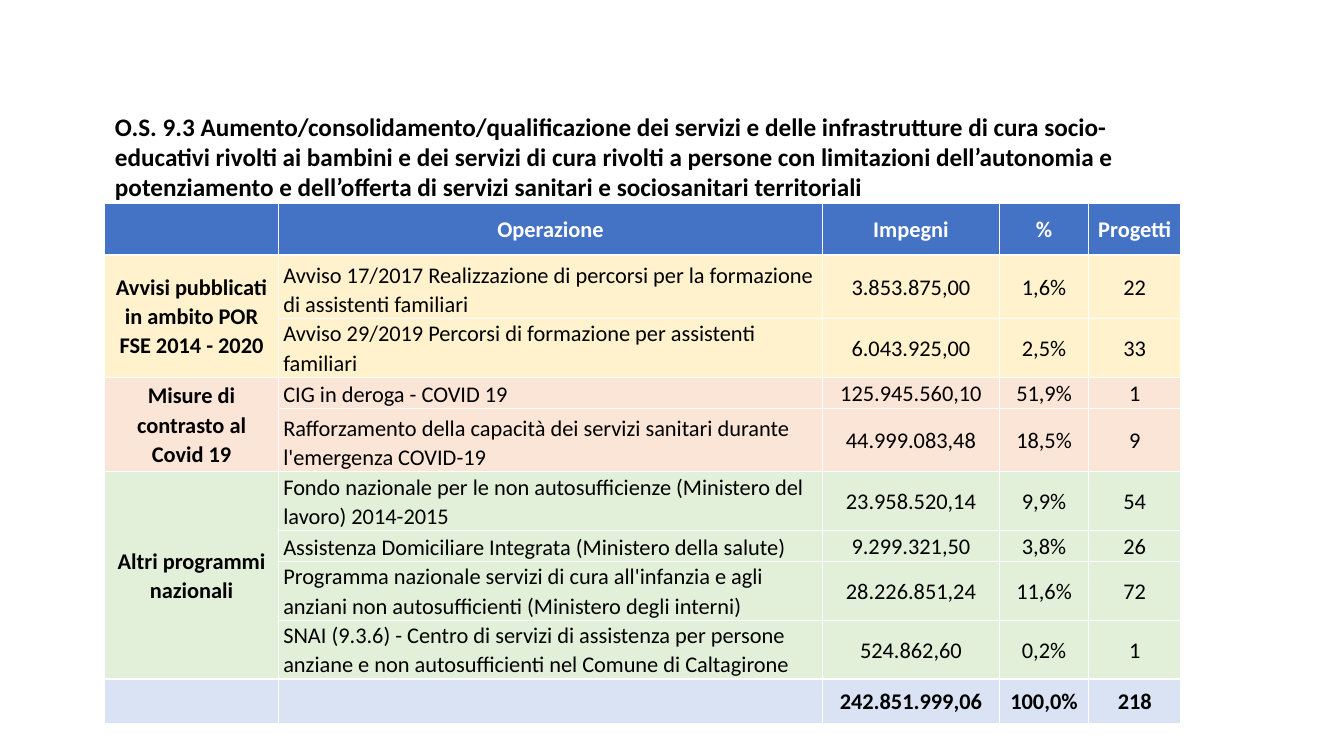
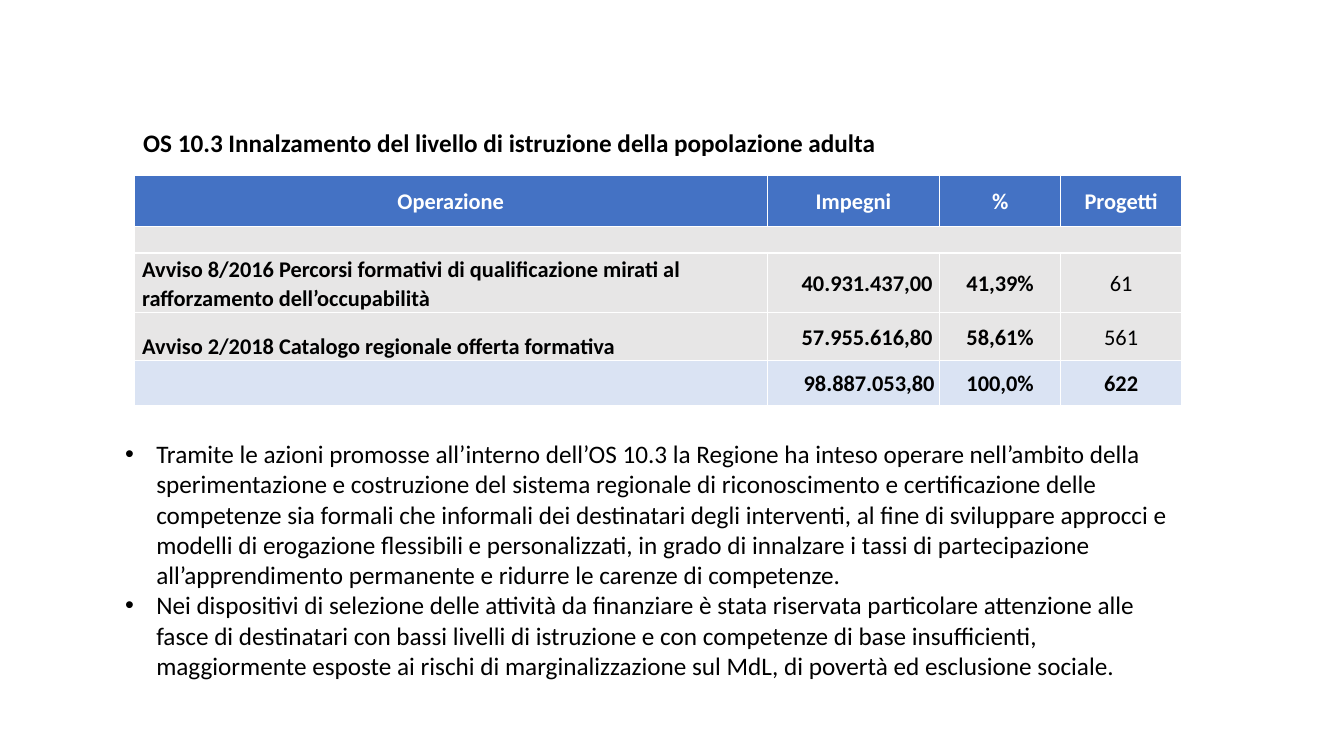
from dataclasses import dataclass

from pptx import Presentation
from pptx.dml.color import RGBColor
from pptx.enum.text import MSO_ANCHOR, MSO_AUTO_SIZE, PP_ALIGN
from pptx.util import Inches, Pt
from lxml import etree


@dataclass(frozen=True)
class Theme:
    font: str = "Calibri"
    text: str = "000000"
    on_header: str = "FFFFFF"
    header: str = "4472C4"
    total: str = "DAE3F3"
    yellow: str = "FFF2CC"
    orange: str = "FBE5D6"
    green: str = "E2F0D9"
    grey: str = "E7E6E6"
    body_size: int = 18
    table_size: int = 16
    empty_size: int = 12


THEME = Theme()

# Content: care services
CARE_TITLE = (
    "O.S. 9.3 Aumento/consolidamento/qualificazione dei servizi e delle infrastrutture di cura "
    "socio-educativi rivolti ai bambini e dei servizi di cura rivolti a persone con limitazioni "
    "dell’autonomia e potenziamento e dell’offerta di servizi sanitari e sociosanitari territoriali"
)
CARE_HEADER = ["", "Operazione", "Impegni", "%", "Progetti"]
CARE_GROUPS = [
    ("Avvisi pubblicati in ambito POR FSE 2014 - 2020", THEME.yellow, [
        ("Avviso 17/2017 Realizzazione di percorsi per la formazione di assistenti familiari",
         "3.853.875,00", "1,6%", "22"),
        ("Avviso 29/2019 Percorsi di formazione per assistenti familiari",
         "6.043.925,00", "2,5%", "33"),
    ]),
    ("Misure di contrasto al Covid 19", THEME.orange, [
        ("CIG in deroga - COVID 19", "125.945.560,10", "51,9%", "1"),
        ("Rafforzamento della capacità dei servizi sanitari durante l'emergenza COVID-19",
         "44.999.083,48", "18,5%", "9"),
    ]),
    ("Altri programmi nazionali", THEME.green, [
        ("Fondo nazionale per le non autosufficienze (Ministero del lavoro) 2014-2015",
         "23.958.520,14", "9,9%", "54"),
        ("Assistenza Domiciliare Integrata (Ministero della salute)",
         "9.299.321,50", "3,8%", "26"),
        ("Programma nazionale servizi di cura all'infanzia e agli anziani non autosufficienti "
         "(Ministero degli interni)", "28.226.851,24", "11,6%", "72"),
        ("SNAI (9.3.6) - Centro di servizi di assistenza per persone anziane e non "
         "autosufficienti nel Comune di Caltagirone", "524.862,60", "0,2%", "1"),
    ]),
]
CARE_TOTAL = ["", "", "242.851.999,06", "100,0%", "218"]

# Content: adult education
ADULT_TITLE = "OS 10.3 Innalzamento del livello di istruzione della popolazione adulta"
ADULT_HEADER = CARE_HEADER[1:]
ADULT_ROWS = [
    ("", "", "", ""),
    ("Avviso 8/2016 Percorsi formativi di qualificazione mirati al rafforzamento "
     "dell’occupabilità", "40.931.437,00", "41,39%", "61"),
    ("Avviso 2/2018 Catalogo regionale offerta formativa", "57.955.616,80", "58,61%", "561"),
]
ADULT_TOTAL = ["", "98.887.053,80", "100,0%", "622"]
ADULT_POINTS = [
    "Tramite le azioni promosse all’interno dell’OS 10.3 la Regione ha inteso operare nell’ambito "
    "della sperimentazione e costruzione del sistema regionale di riconoscimento e certificazione "
    "delle competenze sia formali che informali dei destinatari degli interventi, al fine di "
    "sviluppare approcci e modelli di erogazione flessibili e personalizzati, in grado di innalzare "
    "i tassi di partecipazione all’apprendimento permanente e ridurre le carenze di competenze.",
    "Nei dispositivi di selezione delle attività da finanziare è stata riservata particolare "
    "attenzione alle fasce di destinatari con bassi livelli di istruzione e con competenze di base "
    "insufficienti, maggiormente esposte ai rischi di marginalizzazione sul MdL, di povertà ed "
    "esclusione sociale.",
]

# Column styles: alignment, anchor, bold, left and right inset
NARROW, WIDE = (0.05, 0.05), (0.08, 0.07)
LABEL = (PP_ALIGN.CENTER, MSO_ANCHOR.MIDDLE, True, NARROW)
FIGURE = (PP_ALIGN.CENTER, MSO_ANCHOR.MIDDLE, False, NARROW)
OPERATION = (PP_ALIGN.LEFT, MSO_ANCHOR.BOTTOM, False, NARROW)
BOLD_OPERATION = (PP_ALIGN.LEFT, MSO_ANCHOR.BOTTOM, True, WIDE)
BOLD_AMOUNT = (PP_ALIGN.RIGHT, MSO_ANCHOR.MIDDLE, True, WIDE)


def set_all(target, **values):
    for name, value in values.items():
        setattr(target, name, value)


def write(paragraph, text, size, color=THEME.text, bold=False):
    run = paragraph.add_run()
    run.text = text
    set_all(run.font, name=THEME.font, size=Pt(size), bold=bold)
    run.font.color.rgb = RGBColor.from_string(color)


def place(placeholder, left, top, width, height, anchor):
    set_all(placeholder, left=Inches(left), top=Inches(top),
            width=Inches(width), height=Inches(height))
    set_all(placeholder.text_frame, word_wrap=True, auto_size=MSO_AUTO_SIZE.NONE,
            vertical_anchor=anchor)


def add_title(slide, text, box):
    place(slide.shapes.title, *box, MSO_ANCHOR.MIDDLE)
    heading = slide.shapes.title.text_frame.paragraphs[0]
    set_all(heading, alignment=PP_ALIGN.LEFT, line_spacing=1.0)
    write(heading, text, THEME.body_size, bold=True)


def add_points(slide, points, box):
    body = slide.placeholders[1]
    place(body, *box, MSO_ANCHOR.TOP)
    for index, text in enumerate(points):
        frame = body.text_frame
        point = frame.add_paragraph() if index else frame.paragraphs[0]
        set_all(point, line_spacing=1.0, space_before=Pt(0))
        properties = point._p.get_or_add_pPr()
        properties.set("marL", str(Inches(0.31)))
        properties.set("indent", str(-Inches(0.31)))
        namespace = properties.nsmap["a"]
        etree.SubElement(properties, f"{{{namespace}}}buFont", typeface="Arial")
        etree.SubElement(properties, f"{{{namespace}}}buChar", char="•")
        write(point, text, THEME.body_size)


def fill_cell(cell, text, fill, color, style):
    alignment, anchor, bold, (left, right) = style
    cell.fill.solid()
    cell.fill.fore_color.rgb = RGBColor.from_string(fill)
    set_all(cell, vertical_anchor=anchor, margin_left=Inches(left),
            margin_right=Inches(right), margin_top=0, margin_bottom=0)
    paragraph = cell.text_frame.paragraphs[0]
    if text:
        set_all(paragraph, alignment=alignment, line_spacing=1.07, space_after=Pt(8))
        write(paragraph, text, THEME.table_size, color, bold)
    else:
        paragraph._p.get_or_add_endParaRPr().set("sz", str(THEME.empty_size * 100))


def add_summary(slide, left, top, widths, heights, styles, header, rows, total):
    """Draw a table; rows holds pairs of fill colour and cell texts."""
    table = slide.shapes.add_table(
        len(heights), len(widths), Inches(left), Inches(top),
        Inches(sum(widths)), Inches(sum(heights))).table
    table.horz_banding = False
    for column, width in zip(table.columns, widths):
        column.width = Inches(width)
    for row, height in zip(table.rows, heights):
        row.height = Inches(height)

    total_styles = [(align, MSO_ANCHOR.MIDDLE, True, NARROW) for align, *_ in styles]
    lines = [
        (THEME.header, THEME.on_header, header, [LABEL] * len(widths)),
        *((fill, THEME.text, texts, styles) for fill, texts in rows),
        (THEME.total, THEME.text, total, total_styles),
    ]
    for row, (fill, color, texts, row_styles) in enumerate(lines):
        for column, (text, style) in enumerate(zip(texts, row_styles)):
            fill_cell(table.cell(row, column), text, fill, color, style)
    return table


def build_care_slide(deck):
    slide = deck.slides.add_slide(deck.slide_layouts[5])
    add_title(slide, CARE_TITLE, (1.04, 1.05, 10.67, 1.0))
    rows = [(fill, ["" if index else label, *texts])
            for label, fill, group in CARE_GROUPS for index, texts in enumerate(group)]
    one_line, two_lines, roomy = 0.31, 0.58, 0.63
    table = add_summary(
        slide, 1.04, 2.02, [1.72, 5.4, 1.75, 0.89, 0.91],
        [0.51, roomy, two_lines, one_line, roomy, two_lines, one_line, two_lines, two_lines, 0.44],
        [LABEL, OPERATION, FIGURE, FIGURE, FIGURE], CARE_HEADER, rows, CARE_TOTAL)
    # Group labels span their rows
    first = 1
    for _, _, group in CARE_GROUPS:
        table.cell(first, 0).merge(table.cell(first + len(group) - 1, 0))
        first += len(group)


def build_adult_slide(deck):
    slide = deck.slides.add_slide(deck.slide_layouts[1])
    add_title(slide, ADULT_TITLE, (1.32, 1.21, 10.38, 0.4))
    table = add_summary(
        slide, 1.33, 1.74, [6.28, 1.71, 1.2, 1.2], [0.51, 0.26, 0.59, 0.48, 0.44],
        [BOLD_OPERATION, BOLD_AMOUNT, LABEL, FIGURE],
        ADULT_HEADER, [(THEME.grey, texts) for texts in ADULT_ROWS], ADULT_TOTAL)
    table.cell(1, 0).merge(table.cell(1, 3))
    add_points(slide, ADULT_POINTS, (1.14, 4.3, 10.71, 2.52))


def main():
    deck = Presentation()
    set_all(deck, slide_width=Inches(13.33), slide_height=Inches(7.5))
    build_care_slide(deck)
    build_adult_slide(deck)
    deck.save("out.pptx")


if __name__ == "__main__":
    main()
